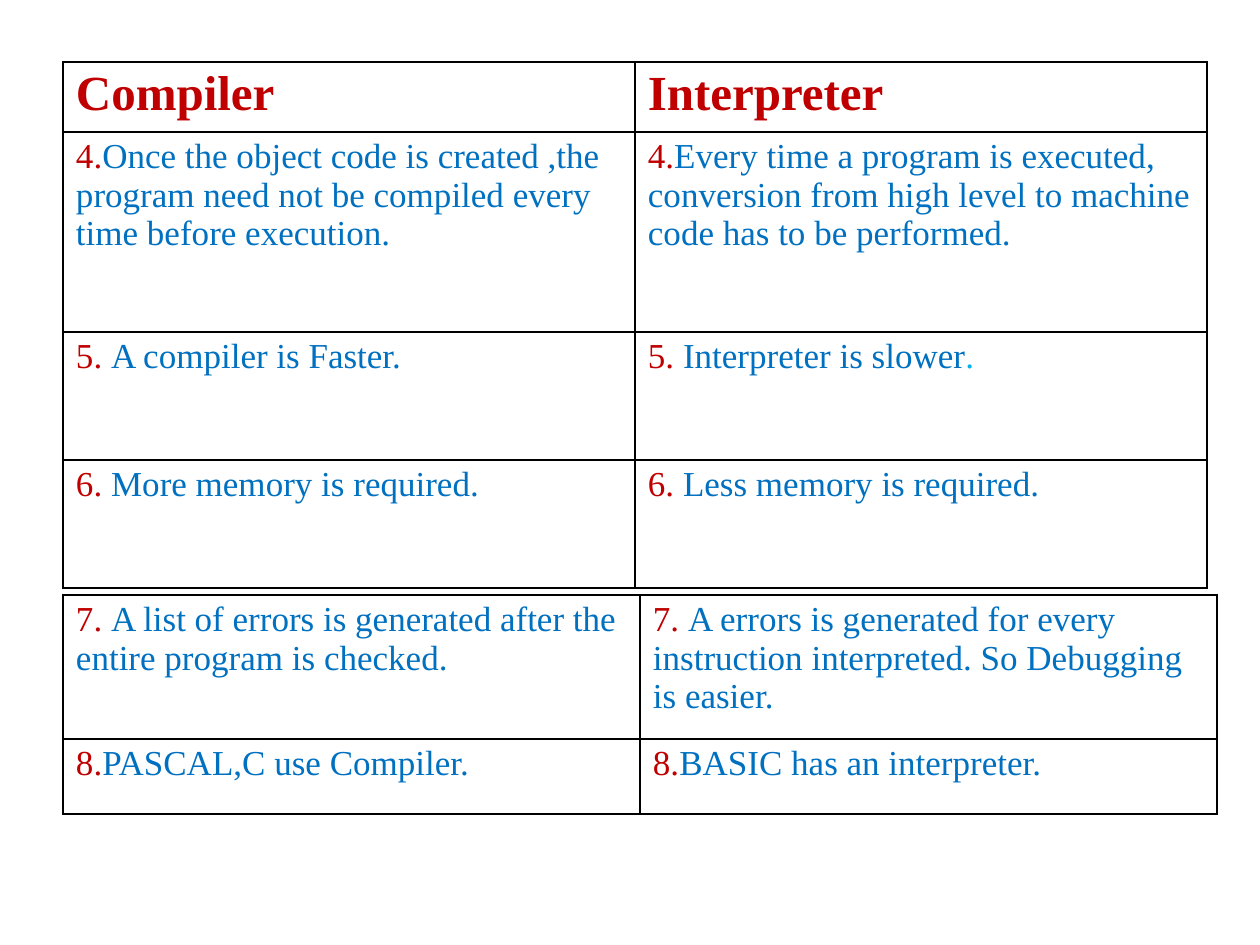
from dataclasses import dataclass
from typing import Any

from lxml import etree
from pptx import Presentation
from pptx.dml.color import RGBColor
from pptx.oxml.ns import qn
from pptx.util import Emu, Pt

EMU_PER_PX = 914400 / 126
COLOURS = {"number": "C00000", "body": "0070C0", "accent": "00B0F0", "border": "000000"}
HEADINGS = ("Compiler", "Interpreter")
MAIN_POINTS = [
    (("4.", "Once the object code is created ,the program need not be compiled every time before execution."),
     ("4.", "Every time a program is executed, conversion from high level to machine code has to be performed.")),
    (("5. ", "A compiler is Faster."), ("5. ", "Interpreter is slower", ".")),
    (("6. ", "More memory is required."), ("6. ", "Less memory is required.")),
]
FURTHER_POINTS = [
    (("7. ", "A list of errors is generated after the entire program is checked."),
     ("7. ", "A errors is generated for every instruction interpreted. So Debugging is easier.")),
    (("8.", "PASCAL,C use Compiler."), ("8.", "BASIC has an interpreter.")),
]


def px(length):
    return Emu(round(length * EMU_PER_PX))


@dataclass
class ComparisonSlide:
    """Draws bordered comparison tables on one slide in a shared style."""

    slide: Any
    font: str = "Times New Roman"
    heading_size: int = 28
    body_size: int = 20
    border_width: int = 1

    def table(self, left, top, column_width, row_heights, points, headings=None):
        column_count = len(points[0])
        grid = self.slide.shapes.add_table(
            len(row_heights), column_count, px(left), px(top),
            px(column_width * column_count), px(sum(row_heights))).table
        grid.first_row = grid.horz_banding = False
        for column in grid.columns:
            column.width = px(column_width)
        for row, height in zip(grid.rows, row_heights):
            row.height = px(height)
        if headings:
            points = [[(heading,) for heading in headings], *points]
        for row_index, row_points in enumerate(points):
            is_heading = bool(headings) and row_index == 0
            for column_index, parts in enumerate(row_points):
                self.cell(grid.cell(row_index, column_index), parts, is_heading)

    def cell(self, cell, parts, is_heading):
        cell.margin_left = cell.margin_right = px(13)
        cell.margin_top = cell.margin_bottom = px(5)
        self.borders(cell)
        cell.fill.background()
        paragraph = cell.text_frame.paragraphs[0]
        for part, role in zip(parts, ("number", "body", "accent")):
            self.run(paragraph, part, role, is_heading)

    def run(self, paragraph, text, role, is_heading):
        run = paragraph.add_run()
        run.text = text
        run.font.name = self.font
        run.font.size = Pt(self.heading_size if is_heading else self.body_size)
        run.font.bold = is_heading
        run.font.color.rgb = RGBColor.from_string(COLOURS[role])

    def borders(self, cell):
        properties = cell._tc.get_or_add_tcPr()
        for side in ("a:lnL", "a:lnR", "a:lnT", "a:lnB"):
            line = etree.SubElement(properties, qn(side), w=str(Pt(self.border_width)))
            fill = etree.SubElement(line, qn("a:solidFill"))
            etree.SubElement(fill, qn("a:srgbClr"), val=COLOURS["border"])


def main():
    deck = Presentation()
    deck.slide_width, deck.slide_height = px(1260), px(945)
    comparison = ComparisonSlide(deck.slides.add_slide(deck.slide_layouts[6]))
    comparison.table(63, 62, 572, (70, 200, 128, 128), MAIN_POINTS, HEADINGS)
    comparison.table(63, 595, 577, (144, 75), FURTHER_POINTS)
    deck.save("out.pptx")


if __name__ == "__main__":
    main()
